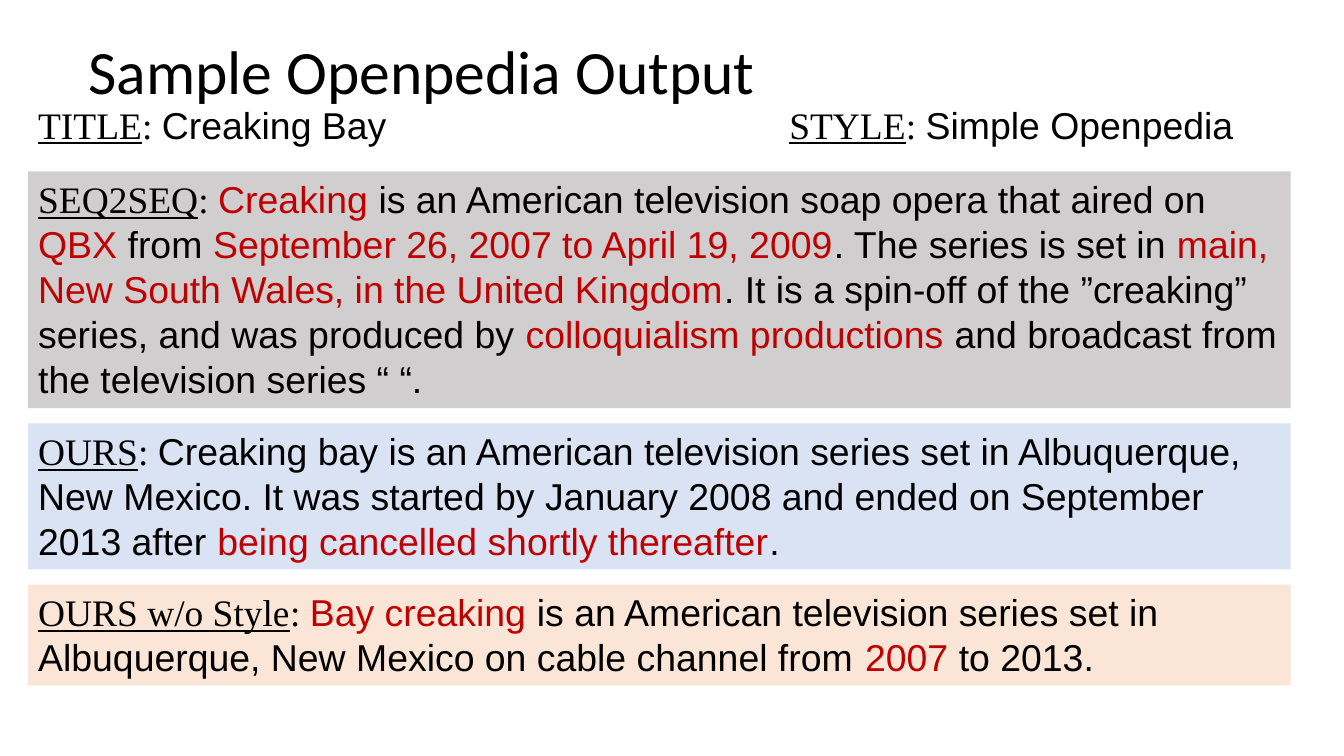
"""Build a slide comparing sample encyclopedia outputs of three models."""
from lxml import etree
from pptx import Presentation
from pptx.dml.color import RGBColor
from pptx.enum import shapes, text
from pptx.oxml import ns
from pptx.util import Inches, Pt

BLACK = RGBColor(0x00, 0x00, 0x00)
RED = RGBColor(0xC0, 0x00, 0x00)
WHITE = RGBColor(0xFF, 0xFF, 0xFF)
GRAY = RGBColor(0xD0, 0xCE, 0xCE)
BLUE = RGBColor(0xDA, 0xE3, 0xF3)
PEACH = RGBColor(0xFB, 0xE5, 0xD6)

STYLES = {
    "label": ("Times New Roman", BLACK, True),
    "colon": ("Times New Roman", BLACK, False),
    "plain": ("Arial", BLACK, False),
    "error": ("Arial", RED, False),
}

TITLE = "Sample Openpedia Output"
HEADER = [
    ("TITLE", "label"), (": ", "colon"), ("Creaking Bay\t", "plain"),
    ("STYLE", "label"), (": ", "colon"), ("Simple Openpedia", "plain"),
]
OUTPUTS = [
    (GRAY, 2.35, [
        ("SEQ2SEQ", "label"), (": ", "colon"),
        ("Creaking", "error"),
        (" is an American television soap opera that aired on ", "plain"),
        ("QBX", "error"), (" from ", "plain"),
        ("September 26, 2007 to April 19, 2009", "error"),
        (". The series is set in ", "plain"),
        ("main, New South Wales, in the United Kingdom", "error"),
        (". It is a spin-off of the ”creaking” series, and was produced by ", "plain"),
        ("colloquialism productions ", "error"),
        ("and broadcast from the television series “ “.", "plain"),
    ]),
    (BLUE, 1.45, [
        ("OURS", "label"), (": ", "colon"),
        ("Creaking bay is an American television series set in Albuquerque, "
         "New Mexico. It was started by January 2008 and ended on September "
         "2013 after ", "plain"),
        ("being cancelled shortly thereafter", "error"), (".", "plain"),
    ]),
    (PEACH, 1, [
        ("OURS w/o Style", "label"), (": ", "colon"),
        ("Bay creaking ", "error"),
        ("is an American television series set in Albuquerque, New Mexico "
         "on cable channel from ", "plain"),
        ("2007", "error"), (" to 2013.", "plain"),
    ]),
]
LEFT, FIRST_TOP, GAP = 0.28, 1.7, 0.15
STYLE_TAB = 7.45


def add_panel(slide, top, width, height, fill, pieces):
    panel = slide.shapes.add_shape(
        shapes.MSO_SHAPE.RECTANGLE,
        Inches(LEFT), Inches(top), Inches(width), Inches(height))
    panel.shadow.inherit = False
    panel.fill.solid()
    panel.fill.fore_color.rgb = fill
    panel.line.fill.background()
    frame = panel.text_frame
    frame.word_wrap = True
    frame.vertical_anchor = text.MSO_ANCHOR.TOP
    paragraph = frame.paragraphs[0]
    paragraph.alignment = text.PP_ALIGN.LEFT
    for words, style in pieces:
        run = paragraph.add_run()
        run.text = words
        run.font.size = Pt(26.7)
        run.font.name, run.font.color.rgb, run.font.underline = STYLES[style]
    return paragraph


def add_title(slide):
    box = slide.shapes.add_textbox(
        Inches(0.78), Inches(0.01), Inches(11.5), Inches(1.45))
    frame = box.text_frame
    frame.word_wrap = True
    frame.vertical_anchor = text.MSO_ANCHOR.MIDDLE
    frame.text = TITLE
    paragraph = frame.paragraphs[0]
    paragraph.line_spacing = 0.9
    font = paragraph.runs[0].font
    font.name, font.size, font.color.rgb = "Calibri", Pt(44), BLACK


def main():
    presentation = Presentation()
    presentation.slide_width = Inches(13.33)
    presentation.slide_height = Inches(7.5)
    slide = presentation.slides.add_slide(presentation.slide_layouts[6])

    header = add_panel(slide, 0.96, 12.29, 1, WHITE, HEADER)
    properties = header._p.get_or_add_pPr()
    tabs = etree.SubElement(properties, ns.qn("a:tabLst"))
    etree.SubElement(tabs, ns.qn("a:tab"), pos=str(Inches(STYLE_TAB)), algn="l")

    add_title(slide)
    top = FIRST_TOP
    for fill, height, pieces in OUTPUTS:
        add_panel(slide, top, 12.52, height, fill, pieces)
        top += height + GAP
    presentation.save("out.pptx")


if __name__ == "__main__":
    main()
